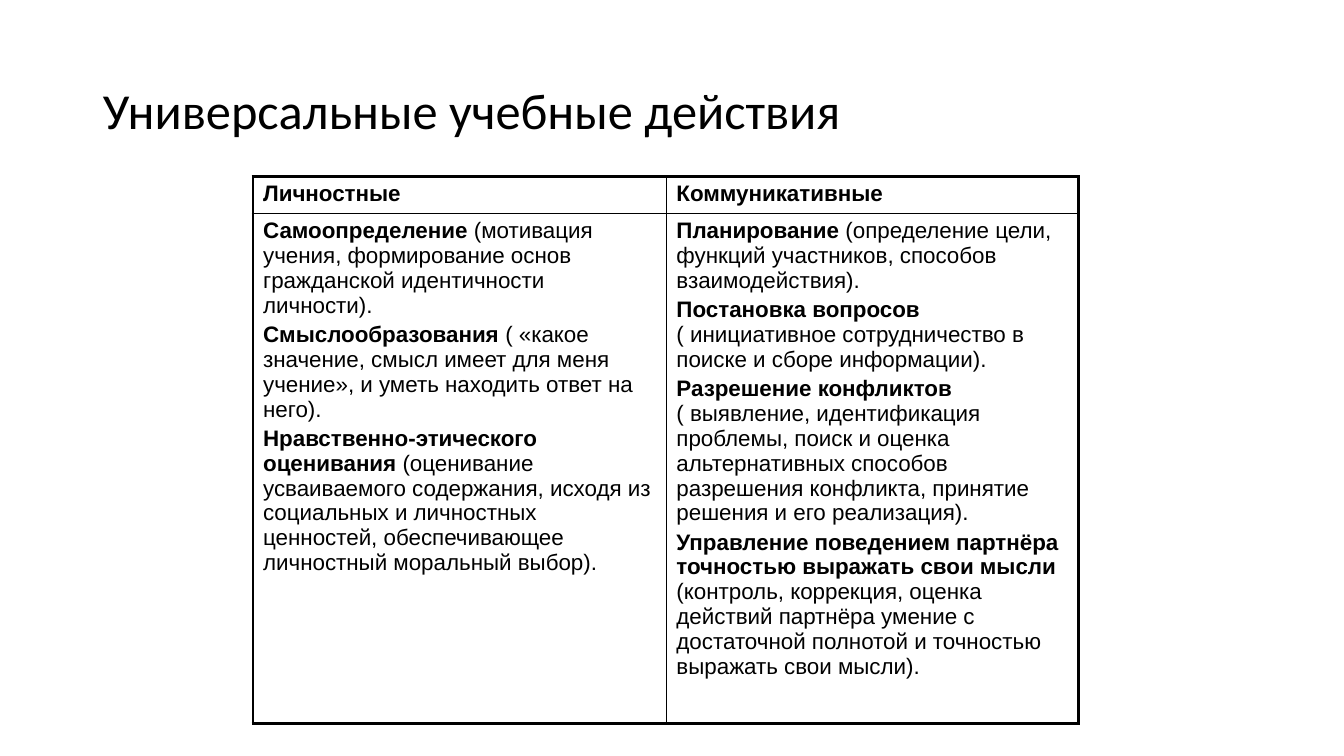
from lxml.etree import SubElement as Sub
from pptx import Presentation
from pptx.dml.color import RGBColor
from pptx.enum.text import MSO_ANCHOR as Anchor
from pptx.oxml.ns import qn
from pptx.util import Inches, Pt

INK = "000000"
HEADS = ["Личностные", "Коммуникативные"]
# Each entry: bold term, plain explanation
ACTS = [
    [
        ("Самоопределение",
         " (мотивация учения, формирование основ гражданской идентичности личности)."),
        ("Смыслообразования ",
         "( «какое значение, смысл имеет для меня учение», и уметь находить ответ на него)."),
        ("Нравственно-этического оценивания ",
         "(оценивание усваиваемого содержания, исходя из социальных и личностных "
         "ценностей, обеспечивающее личностный моральный выбор)."),
    ],
    [
        ("Планирование ",
         "(определение цели, функций участников, способов взаимодействия)."),
        ("Постановка вопросов ",
         "( инициативное сотрудничество в поиске и сборе информации)."),
        ("Разрешение конфликтов",
         " ( выявление, идентификация проблемы, поиск и оценка альтернативных "
         "способов разрешения конфликта, принятие решения и его реализация)."),
        ("Управление поведением партнёра точностью выражать свои мысли ",
         "(контроль, коррекция, оценка действий партнёра умение с достаточной "
         "полнотой и точностью выражать свои мысли)."),
    ],
]
ROWS = [[[(head,)] for head in HEADS], ACTS]
TALL = [0.37, 5.06]
WIDE = [4.1, 4.09]


def paint(color, code):
    color.rgb = RGBColor.from_string(code)


def add_run(para, text, size, face, bold=False):
    run = para.add_run()
    run.text = text
    run.font.size, run.font.name, run.font.bold = Pt(size), face, bold
    paint(run.font.color, INK)


def add_title(slide, text):
    title = slide.shapes.title
    title.left, title.top = Inches(0.92), Inches(0.4)
    title.width, title.height = Inches(11.5), Inches(1.45)
    frame = title.text_frame
    frame.word_wrap, frame.vertical_anchor = True, Anchor.MIDDLE
    para = frame.paragraphs[0]
    para.alignment, para.line_spacing = 1, 0.9
    add_run(para, text, 36, "Calibri")


def add_edge(cell, side, width):
    line = Sub(cell._tc.get_or_add_tcPr(), qn(f"a:ln{side}"), w=str(Pt(width)))
    fill = Sub(line, qn("a:solidFill"))
    Sub(fill, qn("a:srgbClr"), val=INK)


def fill_cell(cell, items):
    frame = cell.text_frame
    for i, parts in enumerate(items):
        para = frame.add_paragraph() if i else frame.paragraphs[0]
        para.space_before = Pt(3)
        for j, text in enumerate(parts):
            add_run(para, text, 16, "Arial", bold=j == 0)


def add_grid(slide):
    frame = slide.shapes.add_table(
        len(TALL), len(WIDE), Inches(2.51), Inches(1.75),
        Inches(sum(WIDE)), Inches(sum(TALL)))
    table = frame.table
    table.first_row = table.horz_banding = False
    for col, wide in zip(table.columns, WIDE):
        col.width = Inches(wide)
    for r, tall in enumerate(TALL):
        table.rows[r].height = Inches(tall)
        for c in range(len(WIDE)):
            cell = table.cell(r, c)
            fill_cell(cell, ROWS[r][c])
            # Thick outer frame, thin inner lines
            outer = {"L": c == 0, "R": c == len(WIDE) - 1,
                     "T": r == 0, "B": r == len(TALL) - 1}
            for side, edge in outer.items():
                add_edge(cell, side, 2.25 if edge else 1)
            cell.fill.background()


def main():
    deck = Presentation()
    deck.slide_width, deck.slide_height = Inches(13.33), Inches(7.5)
    slide = deck.slides.add_slide(deck.slide_layouts[5])
    add_title(slide, "Универсальные учебные действия")
    add_grid(slide)
    deck.save("out.pptx")


if __name__ == "__main__":
    main()
